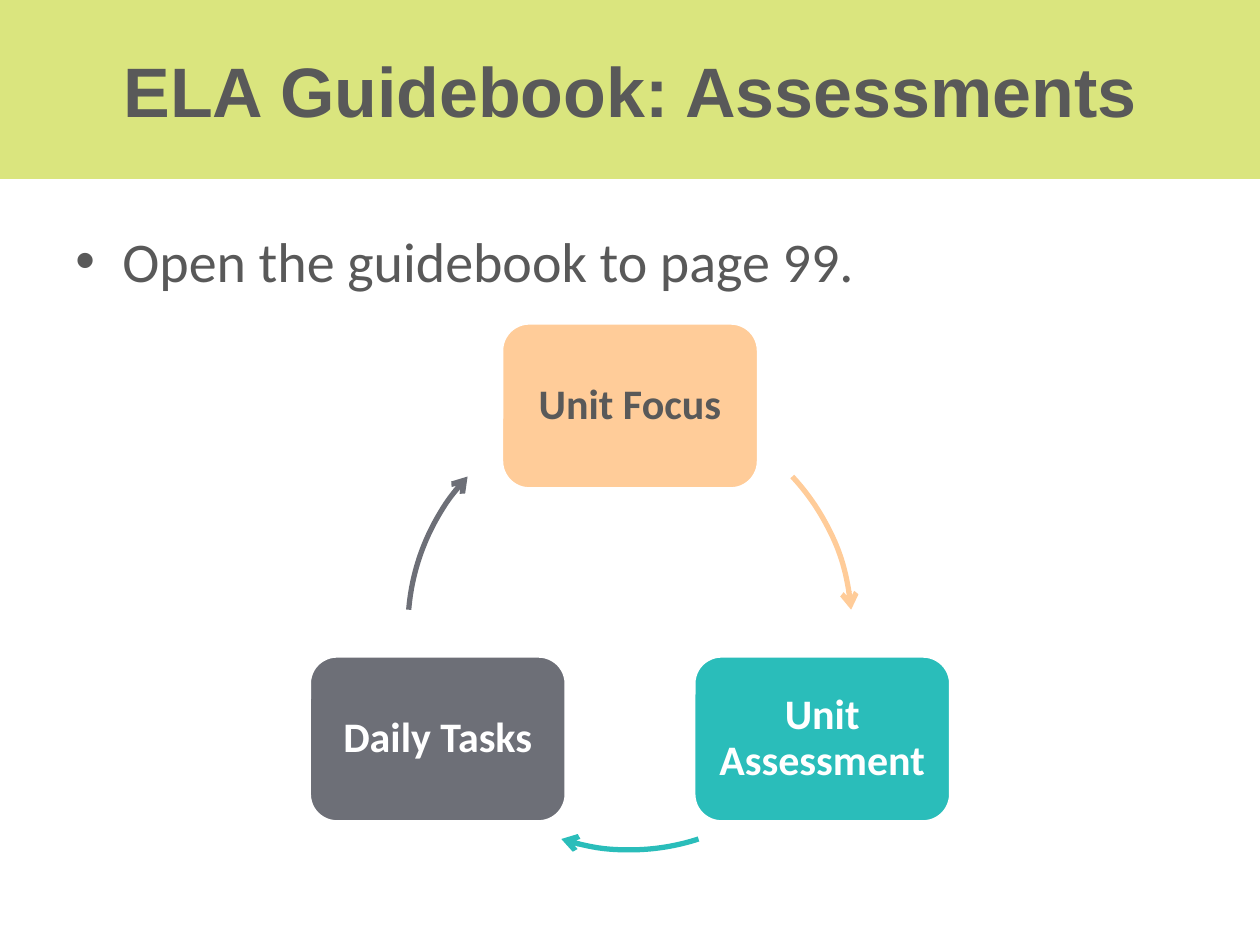
from math import cos, radians, sin

from lxml import etree
from pptx import Presentation
from pptx.dml.color import RGBColor
from pptx.enum.shapes import MSO_SHAPE
from pptx.enum.text import MSO_ANCHOR, PP_ALIGN
from pptx.oxml.ns import qn
from pptx.util import Pt

EMU_PER_PX = 914400 / 126
RECTANGLE = MSO_SHAPE.RECTANGLE
ROUNDED = MSO_SHAPE.ROUNDED_RECTANGLE
ARC = MSO_SHAPE.ARC
MIDDLE = MSO_ANCHOR.MIDDLE
CENTER = PP_ALIGN.CENTER

LIME = RGBColor(0xDA, 0xE5, 0x7E)
DARK = RGBColor(0x59, 0x59, 0x59)
PEACH = RGBColor(0xFF, 0xCC, 0x99)
TEAL = RGBColor(0x2A, 0xBD, 0xBA)
SLATE = RGBColor(0x6D, 0x6F, 0x77)
WHITE = RGBColor(0xFF, 0xFF, 0xFF)


def px(length):
    return round(length * EMU_PER_PX)


class SlideBuilder:
    heading_font = "Arial"
    body_font = "Calibri"

    def __init__(self, slide):
        self.slide = slide

    def set_text(self, shape, text, size, color, font, bold=False):
        frame = shape.text_frame
        frame.word_wrap = True
        frame.text = text
        para = frame.paragraphs[0]
        style = para.runs[0].font
        style.name, style.size, style.bold = font, Pt(size), bold
        style.color.rgb = color
        return para

    def shape(self, kind, left, top, width, height):
        shape = self.slide.shapes.add_shape(
            kind, px(left), px(top), px(width), px(height))
        shape.shadow.inherit = False
        return shape

    def title_band(self, text, width, height):
        band = self.shape(RECTANGLE, 0, 0, width, height)
        band.fill.solid()
        band.fill.fore_color.rgb = LIME
        band.line.fill.background()
        band.text_frame.vertical_anchor = MIDDLE
        para = self.set_text(band, text, 40, DARK, self.heading_font, bold=True)
        para.alignment = CENTER

    def bullet(self, text, left, top, width, height):
        box = self.slide.shapes.add_textbox(
            px(left), px(top), px(width), px(height))
        para = self.set_text(box, text, 32, DARK, self.body_font)
        para.space_before = Pt(6.4)
        properties = para._p.get_or_add_pPr()
        properties.set("marL", str(px(47)))
        properties.set("indent", str(px(-47)))
        font = etree.SubElement(properties, qn("a:buFont"))
        font.set("typeface", "Arial")
        etree.SubElement(properties, qn("a:buChar")).set("char", "•")

    def step(self, text, center_x, center_y, fill, text_color):
        width, height, inset = 257, 166, px(13)
        box = self.shape(ROUNDED, center_x - width / 2, center_y - height / 2,
                         width, height)
        box.fill.solid()
        box.fill.fore_color.rgb = fill
        box.line.color.rgb = WHITE
        box.line.width = Pt(2)
        frame = box.text_frame
        frame.vertical_anchor = MIDDLE
        frame.margin_left = frame.margin_right = inset
        frame.margin_top = frame.margin_bottom = inset
        para = self.set_text(box, text, 24, text_color, self.body_font, bold=True)
        para.alignment = CENTER
        para.line_spacing = 0.9

    def arc_arrow(self, center_x, center_y, radius, start, end, color):
        arc = self.shape(ARC, center_x - radius, center_y - radius,
                         2 * radius, 2 * radius)
        # Angles are stored in 60000ths of a degree, adjustments in 100000ths
        arc.adjustments[0] = start * 0.6
        arc.adjustments[1] = end * 0.6
        arc.fill.background()
        arc.line.color.rgb = color
        arc.line.width = Pt(3)
        line = arc.line._get_or_add_ln()
        etree.SubElement(line, qn("a:tailEnd")).set("type", "arrow")


def main():
    deck = Presentation()
    deck.slide_width, deck.slide_height = px(1260), px(945)
    builder = SlideBuilder(deck.slides.add_slide(deck.slide_layouts[6]))

    # Heading and instruction
    builder.title_band("ELA Guidebook: Assessments", 1260, 179)
    builder.bullet("Open the guidebook to page 99.", 63, 220, 1134, 624)

    # Cycle: steps evenly spaced on a circle, each followed by an arrow
    center_x, center_y, radius = 630, 628, 222
    steps = [
        ("Unit Focus", PEACH, DARK, 317, 355.3),
        ("Unit Assessment", TEAL, WHITE, 72, 108),
        ("Daily Tasks", SLATE, WHITE, 184.7, 223),
    ]
    for index, (text, fill, text_color, start, end) in enumerate(steps):
        angle = radians(index * 360 / len(steps) - 90)
        builder.step(text, center_x + radius * cos(angle),
                     center_y + radius * sin(angle), fill, text_color)
        builder.arc_arrow(center_x, center_y, radius, start, end, fill)

    deck.save("out.pptx")


if __name__ == "__main__":
    main()
